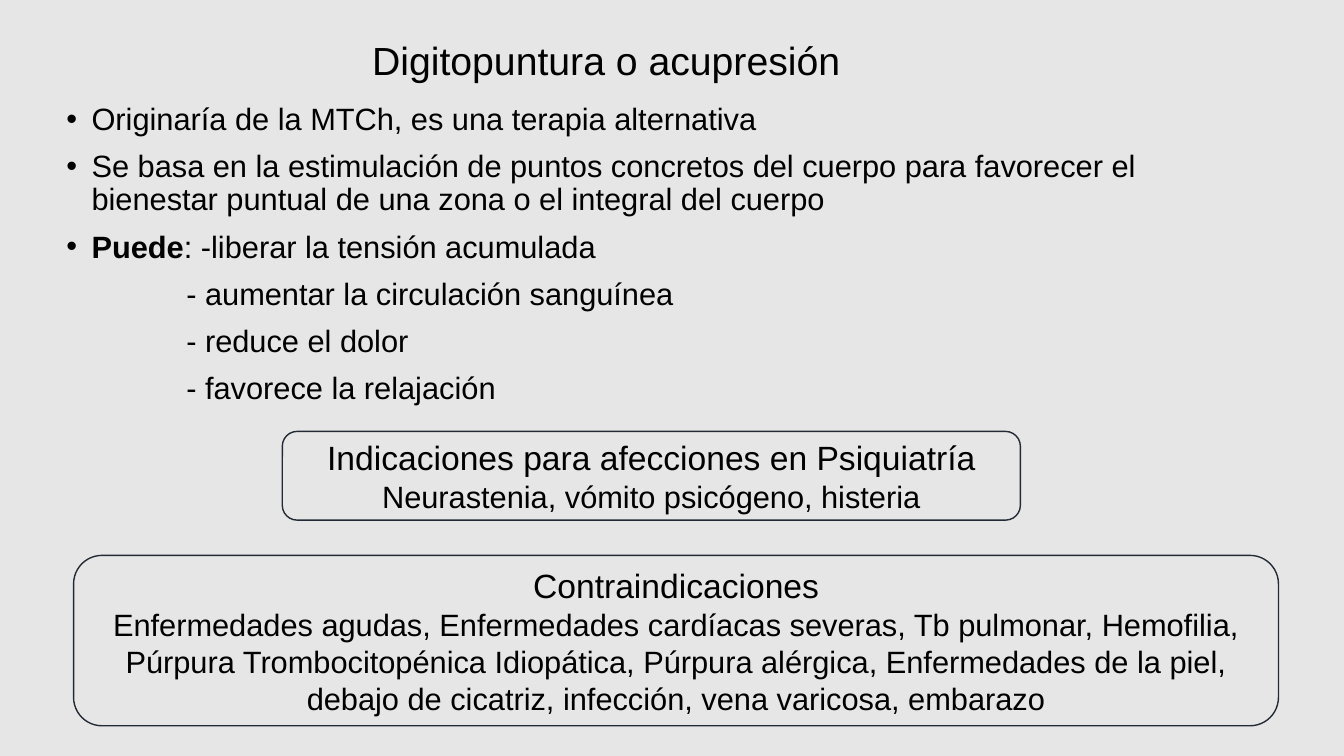
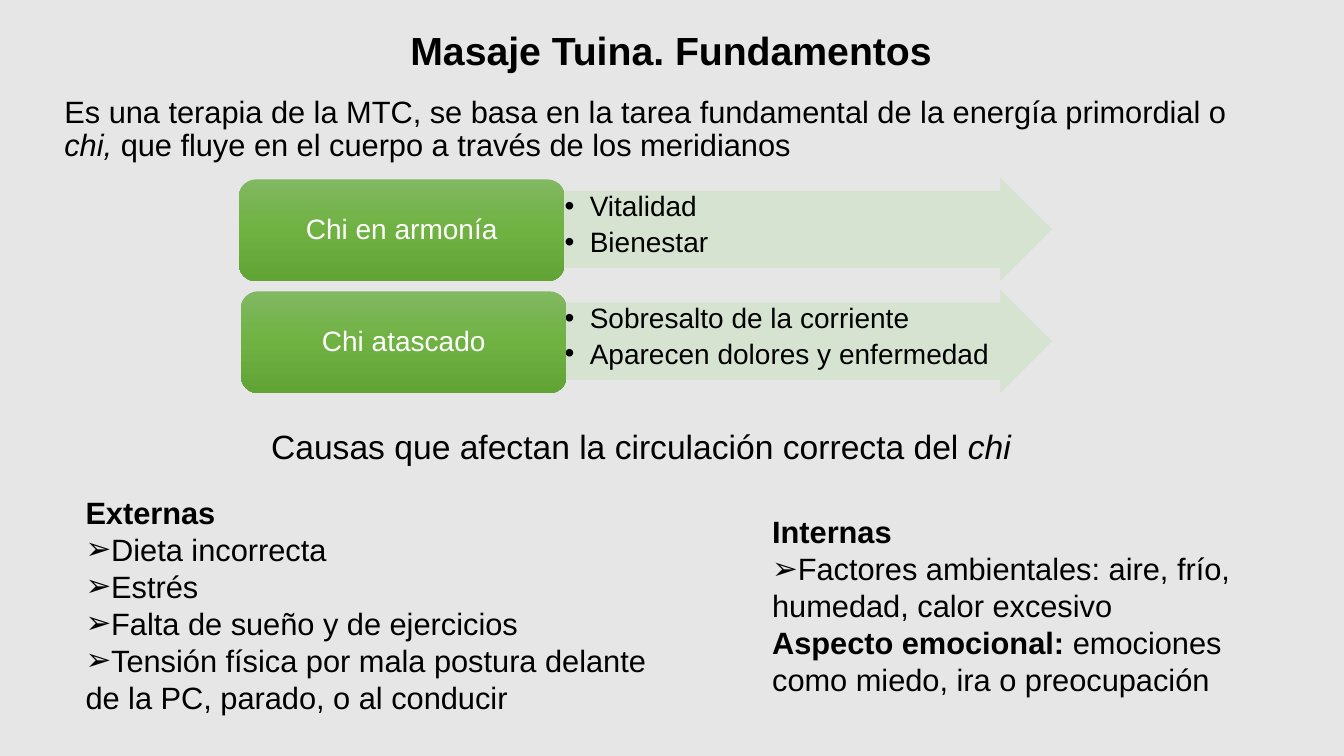
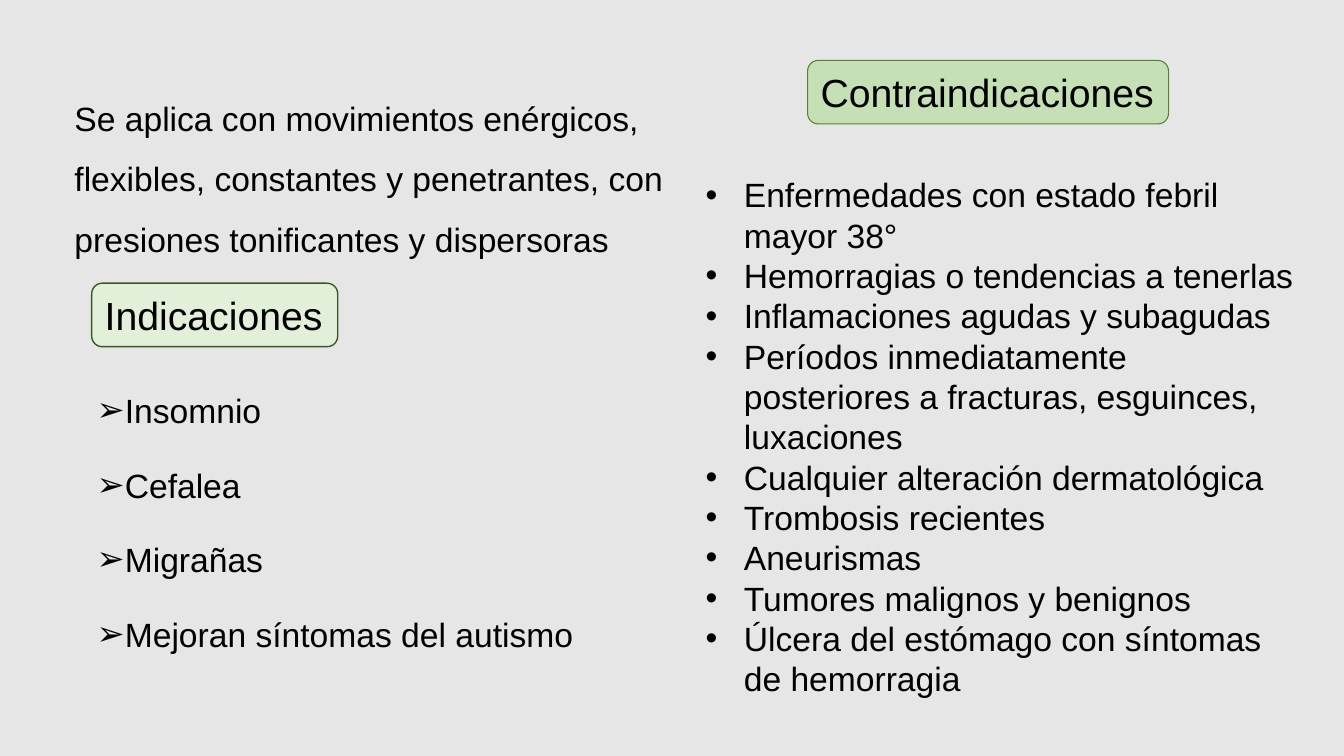
from copy import deepcopy
from dataclasses import dataclass

from lxml import etree
from pptx import Presentation
from pptx.dml.color import RGBColor
from pptx.enum.shapes import MSO_SHAPE
from pptx.enum.text import MSO_ANCHOR, MSO_AUTO_SIZE, PP_ALIGN
from pptx.oxml.ns import qn
from pptx.shapes.autoshape import Shape
from pptx.slide import Slide
from pptx.util import Inches, Pt

ROUNDED, ARROW = MSO_SHAPE.ROUNDED_RECTANGLE, MSO_SHAPE.RIGHT_ARROW
TOP, MIDDLE = MSO_ANCHOR.TOP, MSO_ANCHOR.MIDDLE
LEFT, CENTER = PP_ALIGN.LEFT, PP_ALIGN.CENTER
NO_AUTOFIT = MSO_AUTO_SIZE.NONE
TITLE_ONLY, BLANK = 5, 6
DOT, POINTER = "•", "➢"

Box = tuple[float, float, float, float]


@dataclass(frozen=True)
class Theme:
    font: str = "Arial"
    title: int = 28
    heading: int = 24
    body: int = 22
    small: int = 20
    ink: str = "000000"
    white: str = "FFFFFF"
    background: str = "E7E6E6"
    frame: str = "222A35"
    arrow: str = "D5E3CF"
    pill: tuple[str, ...] = ("81B861", "6FB242", "62A336")


@dataclass(frozen=True)
class Run:
    text: str
    bold: bool = False
    italic: bool = False


@dataclass(frozen=True)
class Para:
    runs: tuple[Run, ...]
    bullet: str = ""
    margin: float = 0
    hanging: float = 0
    size: int = 0


@dataclass(frozen=True)
class Label:
    text: str
    box: Box
    fill: str
    line: str
    weight: float


@dataclass(frozen=True)
class ChiState:
    name: str
    left: float
    effects: tuple[str, ...]


THEME = Theme()


def para(*parts: str | Run, **layout) -> Para:
    runs = tuple(Run(part) if isinstance(part, str) else part for part in parts)
    return Para(runs, **layout)


def bullets(texts: tuple[str, ...], mark: str, hanging: float = 0) -> list[Para]:
    return [para(text, bullet=mark, margin=hanging, hanging=hanging) for text in texts]


def write(shape: Shape, paras: list[Para], *, size: int = THEME.body,
          color: str = THEME.ink, align: PP_ALIGN = LEFT, anchor: MSO_ANCHOR = TOP,
          spacing: float = 1, before: float = 0, after: float = 0,
          inset: float | None = None, wrap: bool = True) -> None:
    """Fill a shape with formatted paragraphs."""
    frame = shape.text_frame
    frame.word_wrap = wrap
    frame.auto_size = NO_AUTOFIT
    frame.vertical_anchor = anchor
    if inset is not None:
        frame.margin_left = frame.margin_right = Inches(inset)
        frame.margin_top = frame.margin_bottom = Inches(inset)
    for index, item in enumerate(paras):
        paragraph = frame.add_paragraph() if index else frame.paragraphs[0]
        paragraph.alignment = align
        paragraph.line_spacing = spacing
        paragraph.space_before, paragraph.space_after = Pt(before), Pt(after)
        properties = paragraph._p.get_or_add_pPr()
        properties.set("marL", str(Inches(item.margin)))
        properties.set("indent", str(-Inches(item.hanging)))
        if item.bullet:
            etree.SubElement(properties, qn("a:buFont")).set("typeface", THEME.font)
            etree.SubElement(properties, qn("a:buChar")).set("char", item.bullet)
        for piece in item.runs:
            run = paragraph.add_run()
            run.text = piece.text
            run.font.name = THEME.font
            run.font.size = Pt(item.size or size)
            run.font.bold, run.font.italic = piece.bold, piece.italic
            run.font.color.rgb = RGBColor.from_string(color)


def add_text(slide: Slide, box: Box, paras: list[Para], **formatting) -> None:
    write(slide.shapes.add_textbox(*map(Inches, box)), paras, **formatting)


def add_title(slide: Slide, box: Box, title: Run) -> None:
    holder = slide.shapes.title
    holder.left, holder.top, holder.width, holder.height = map(Inches, box)
    write(holder, [para(title)], size=THEME.title, anchor=MIDDLE, spacing=0.9)


def add_panel(slide: Slide, kind: MSO_SHAPE, box: Box, fill: str,
              line: str, weight: float) -> Shape:
    panel = slide.shapes.add_shape(kind, *map(Inches, box))
    panel.shadow.inherit = False
    panel.fill.solid()
    panel.fill.fore_color.rgb = RGBColor.from_string(fill)
    panel.line.color.rgb = RGBColor.from_string(line)
    panel.line.width = Pt(weight)
    return panel


def add_label(slide: Slide, label: Label) -> None:
    panel = add_panel(slide, ROUNDED, label.box, label.fill, label.line, label.weight)
    write(panel, [para(label.text)], size=THEME.title, wrap=False)


def add_pill(slide: Slide, box: Box, text: str) -> None:
    """Rounded shape with a three-stop vertical gradient."""
    pill = slide.shapes.add_shape(ROUNDED, *map(Inches, box))
    pill.shadow.inherit = False
    pill.line.fill.background()
    pill.fill.gradient()
    pill.fill.gradient_angle = 270
    stops = pill._element.spPr.find(qn("a:gradFill")).find(qn("a:gsLst"))
    stops.insert(1, deepcopy(stops[0]))
    for index, color in enumerate(THEME.pill):
        stop = pill.fill.gradient_stops[index]
        stop.position = index / (len(THEME.pill) - 1)
        stop.color.rgb = RGBColor.from_string(color)
    write(pill, [para(text)], size=THEME.small, color=THEME.white,
          align=CENTER, anchor=MIDDLE, spacing=0.9)


def add_chi_state(slide: Slide, state: ChiState, top: float) -> None:
    arrow = add_panel(slide, ARROW, (5.59, top, 4.84, 1.01), THEME.arrow, THEME.arrow, 0.5)
    arrow.adjustments[0], arrow.adjustments[1] = 0.75, 0.5
    for color in arrow._element.spPr.iter(qn("a:srgbClr")):
        etree.SubElement(color, qn("a:alpha")).set("val", "90000")
    write(arrow, bullets(state.effects, DOT, 0.25), size=THEME.small,
          spacing=0.9, after=4, inset=0.01)
    add_pill(slide, (state.left, top + 0.01, 3.23, 1.01), state.name)


def build_acupressure(slide: Slide) -> None:
    add_title(slide, (3.59, 0.26, 6.53, 0.72), Run("Digitopuntura o acupresión"))
    origins = bullets((
        "Originaría de la MTCh, es una terapia alternativa",
        "Se basa en la estimulación de puntos concretos del cuerpo para favorecer el "
        "bienestar puntual de una zona o el integral del cuerpo",
    ), DOT, 0.25)
    benefits = [para(Run("Puede", bold=True), ": -liberar la tensión acumulada",
                     bullet=DOT, margin=0.25, hanging=0.25)]
    benefits += [para(text, margin=1.19) for text in (
        "- aumentar la circulación sanguínea", "- reduce el dolor",
        "- favorece la relajación")]
    add_text(slide, (0.56, 0.98, 12.12, 3.14), origins + benefits, spacing=0.9, before=10)

    # Framed indications and contraindications
    for box, heading, detail in (
        ((2.8, 4.28, 7.32, 0.88), "Indicaciones para afecciones en Psiquiatría",
         "Neurastenia, vómito psicógeno, histeria"),
        ((0.73, 5.51, 11.95, 1.69), "Contraindicaciones",
         "Enfermedades agudas, Enfermedades cardíacas severas, Tb pulmonar, Hemofilia, "
         "Púrpura Trombocitopénica Idiopática, Púrpura alérgica, Enfermedades de la piel, "
         "debajo de cicatriz, infección, vena varicosa, embarazo"),
    ):
        panel = add_panel(slide, ROUNDED, box, THEME.background, THEME.frame, 1)
        write(panel, [para(heading, size=THEME.heading), para(detail)],
              align=CENTER, anchor=MIDDLE)


def build_tuina(slide: Slide) -> None:
    add_title(slide, (3.97, 0.25, 6.46, 0.54), Run("Masaje Tuina. Fundamentos", bold=True))
    add_text(slide, (0.54, 0.91, 12.24, 0.86), [para(
        "Es una terapia de la MTC, se basa en la tarea fundamental de la energía primordial o ",
        Run("chi, ", italic=True),
        "que fluye en el cuerpo a través de los meridianos")], spacing=0.9, before=10)

    # States of the chi and their effects
    states = (
        ChiState("Chi en armonía", 2.37, ("Vitalidad", "Bienestar")),
        ChiState("Chi atascado", 2.39,
                 ("Sobresalto de la corriente", "Aparecen dolores y enfermedad")),
    )
    for row, state in enumerate(states):
        add_chi_state(slide, state, 1.77 + 1.11 * row)

    # Causes
    add_text(slide, (2.59, 4.18, 7.71, 0.5), [para(
        "Causas que afectan la circulación correcta del ", Run("chi", italic=True))],
        size=THEME.heading)
    external = bullets((
        "Dieta incorrecta", "Estrés", "Falta de sueño y de ejercicios",
        "Tensión física por mala postura delante de la PC, parado, o al conducir"), POINTER)
    add_text(slide, (0.75, 4.85, 5.87, 2.32),
             [para(Run("Externas", bold=True)), *external])
    internal = bullets(
        ("Factores ambientales: aire, frío, humedad, calor excesivo",), POINTER)
    add_text(slide, (7.56, 5.04, 5.22, 1.95), [
        para(Run("Internas", bold=True)), *internal,
        para(Run("Aspecto emocional: ", bold=True),
             "emociones como miedo, ira o preocupación")])


def build_application(slide: Slide) -> None:
    add_text(slide, (0.64, 0.72, 6.05, 1.92), [para(
        "Se aplica con movimientos enérgicos, flexibles, constantes y penetrantes, con "
        "presiones tonificantes y dispersoras")],
        size=THEME.heading, spacing=1.5, before=10)
    for label in (
        Label("Indicaciones", (0.91, 2.81, 2.44, 0.63), "E2F0D9", "385723", 1),
        Label("Contraindicaciones", (8.01, 0.6, 3.58, 0.63), "C5E0B4", "548235", 0.75),
    ):
        add_label(slide, label)

    # Indications
    add_text(slide, (0.86, 3.62, 4.98, 2.87), bullets(
        ("Insomnio", "Cefalea", "Migrañas", "Mejoran síntomas del autismo"), POINTER, 0.25),
        size=THEME.heading, spacing=1.5, before=10)

    # Contraindications
    add_text(slide, (6.9, 1.68, 6.07, 5.35), bullets((
        "Enfermedades con estado febril mayor 38°",
        "Hemorragias o tendencias a tenerlas",
        "Inflamaciones agudas y subagudas",
        "Períodos inmediatamente posteriores a fracturas, esguinces, luxaciones",
        "Cualquier alteración dermatológica",
        "Trombosis recientes",
        "Aneurismas",
        "Tumores malignos y benignos",
        "Úlcera del estómago con síntomas de hemorragia"), DOT, 0.38), size=THEME.heading)


def main() -> None:
    deck = Presentation()
    deck.slide_width, deck.slide_height = Inches(13.33), Inches(7.5)
    background = deck.slide_master.background.fill
    background.solid()
    background.fore_color.rgb = RGBColor.from_string(THEME.background)
    for layout, build in ((TITLE_ONLY, build_acupressure), (TITLE_ONLY, build_tuina),
                          (BLANK, build_application)):
        build(deck.slides.add_slide(deck.slide_layouts[layout]))
    deck.save("out.pptx")


if __name__ == "__main__":
    main()
